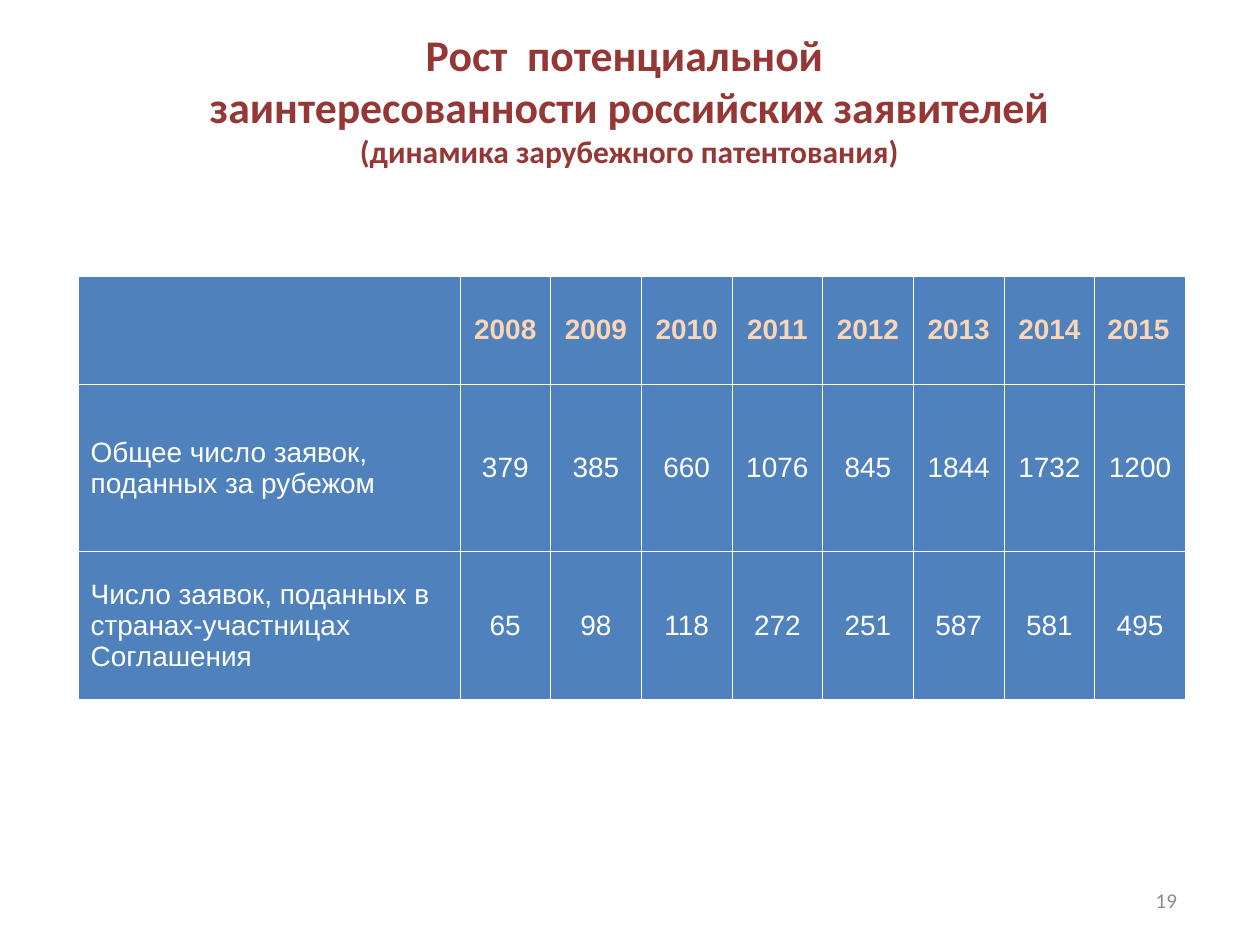
from dataclasses import dataclass

from lxml.etree import SubElement
from pptx import Presentation
from pptx.dml.color import RGBColor
from pptx.enum.text import MSO_ANCHOR, PP_ALIGN
from pptx.oxml.ns import qn
from pptx.util import Inches, Pt

COLORS = {
    "title": "953735",
    "cell": "4F81BD",
    "year": "FCD5B5",
    "white": "FFFFFF",
    "number": "8C8C8C",
}
LABEL_WIDTH, YEAR_WIDTH = 3.03, 0.72
TITLE_LINES = [
    ("Рост  потенциальной ", 25),
    ("заинтересованности российских заявителей", 25),
    ("(динамика зарубежного патентования)", 18),
]


@dataclass
class TableRow:
    label: str
    values: list[int]
    height: float
    color: str = "white"
    bold: bool = False


ROWS = [
    TableRow("", list(range(2008, 2016)), 0.86, "year", True),
    TableRow("Общее число заявок, поданных за рубежом",
             [379, 385, 660, 1076, 845, 1844, 1732, 1200], 1.33),
    TableRow("Число заявок, поданных в странах-участницах Соглашения",
             [65, 98, 118, 272, 251, 587, 581, 495], 1.17),
]


def format_font(font, name: str, size: float, color: str, bold: bool = False) -> None:
    font.name = name
    font.size = Pt(size)
    font.bold = bold
    font.color.rgb = RGBColor.from_string(COLORS[color])


def place(shape, left: float, top: float, width: float, height: float) -> None:
    shape.left, shape.top = Inches(left), Inches(top)
    shape.width, shape.height = Inches(width), Inches(height)


def add_title(slide) -> None:
    title = slide.shapes.title
    place(title, 1.09, 0.16, 7.81, 1.25)
    title.text_frame.text = "\v".join(text for text, _ in TITLE_LINES)
    title.text_frame.vertical_anchor = MSO_ANCHOR.MIDDLE
    paragraph = title.text_frame.paragraphs[0]
    paragraph.alignment = PP_ALIGN.CENTER
    for run, (_, size) in zip(paragraph.runs, TITLE_LINES):
        format_font(run.font, "Calibri", size, "title", True)
    # A line break carries its own size, which affects the line height
    for line_break, (_, size) in zip(paragraph._p.findall(qn("a:br")), TITLE_LINES):
        SubElement(line_break, qn("a:rPr"), sz=str(size * 100))


def add_borders(cell) -> None:
    properties = cell._tc.get_or_add_tcPr()
    for side in ("lnL", "lnR", "lnT", "lnB"):
        line = SubElement(properties, qn(f"a:{side}"), w=str(Pt(0.5)))
        fill = SubElement(line, qn("a:solidFill"))
        SubElement(fill, qn("a:srgbClr"), val=COLORS["white"])


def fill_cell(cell, text: str, row: TableRow, alignment: PP_ALIGN) -> None:
    add_borders(cell)
    cell.fill.solid()
    cell.fill.fore_color.rgb = RGBColor.from_string(COLORS["cell"])
    cell.vertical_anchor = MSO_ANCHOR.MIDDLE
    cell.text = text
    paragraph = cell.text_frame.paragraphs[0]
    paragraph.alignment = alignment
    for run in paragraph.runs:
        format_font(run.font, "Arial", 16, row.color, row.bold)


def add_applications_table(slide) -> None:
    year_count = len(ROWS[0].values)
    table = slide.shapes.add_table(
        len(ROWS), year_count + 1, Inches(0.62), Inches(2.19),
        Inches(LABEL_WIDTH + year_count * YEAR_WIDTH),
        Inches(sum(row.height for row in ROWS)),
    ).table
    for index, column in enumerate(table.columns):
        column.width = Inches(YEAR_WIDTH if index else LABEL_WIDTH)
    for row_index, row in enumerate(ROWS):
        table.rows[row_index].height = Inches(row.height)
        for column_index, content in enumerate([row.label, *row.values]):
            is_last_year = row_index == 0 and column_index == year_count
            left_aligned = column_index == 0 or is_last_year
            fill_cell(table.cell(row_index, column_index), str(content), row,
                      PP_ALIGN.LEFT if left_aligned else PP_ALIGN.CENTER)


def add_slide_number(slide) -> None:
    box = slide.shapes.add_textbox(Inches(7.11), Inches(6.88), Inches(2.33), Inches(0.52))
    frame = box.text_frame
    frame.word_wrap = True
    frame.vertical_anchor = MSO_ANCHOR.MIDDLE
    frame.text = "19"
    paragraph = frame.paragraphs[0]
    paragraph.alignment = PP_ALIGN.RIGHT
    format_font(paragraph.runs[0].font, "Calibri", 12, "number")


def main() -> None:
    presentation = Presentation()
    presentation.slide_width, presentation.slide_height = Inches(10), Inches(7.5)
    slide = presentation.slides.add_slide(presentation.slide_layouts[5])
    add_title(slide)
    add_applications_table(slide)
    add_slide_number(slide)
    presentation.save("out.pptx")


if __name__ == "__main__":
    main()
